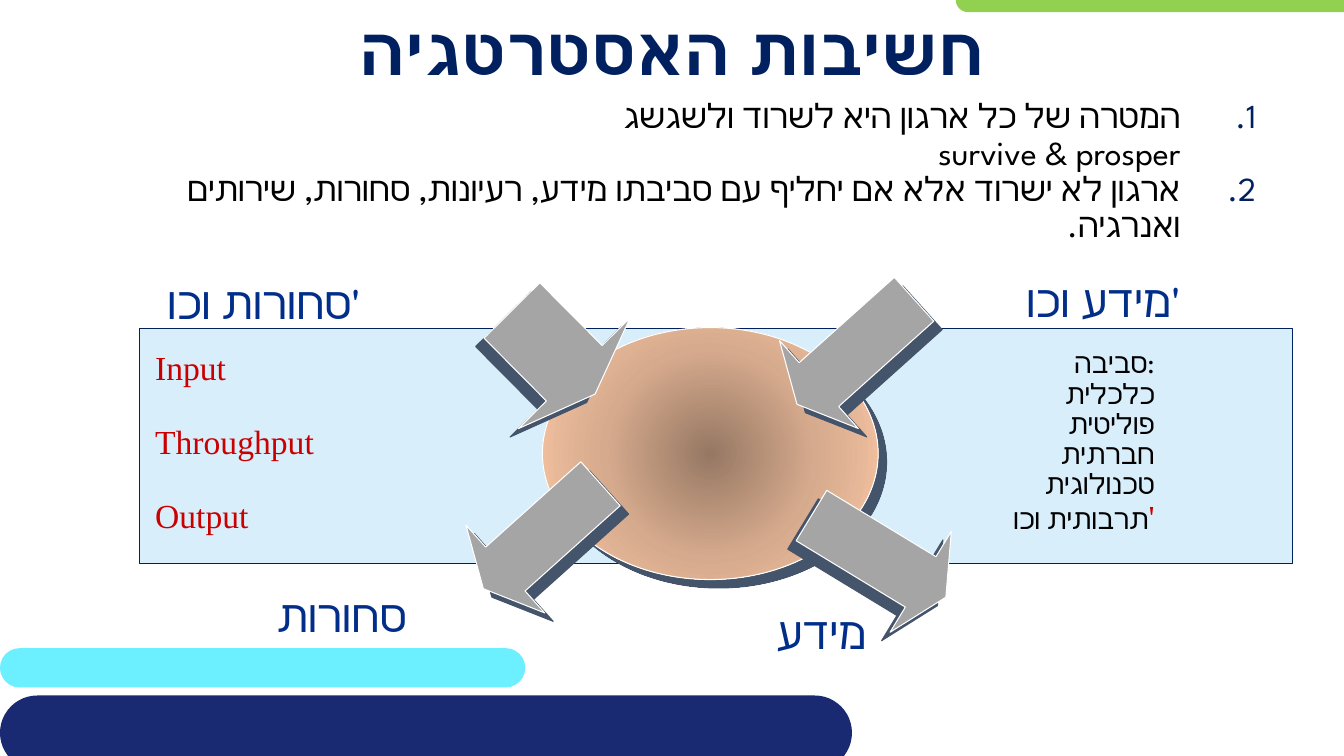
"""Build the slide on the importance of strategy for an organisation."""
import pptx
import pptx.util
import pptx.dml.color
import pptx.enum.shapes
import pptx.enum.text
import pptx.oxml
import pptx.oxml.ns

Inches = pptx.util.Inches
Pt = pptx.util.Pt
RGBColor = pptx.dml.color.RGBColor
SHAPE = pptx.enum.shapes.MSO_SHAPE
ALIGN = pptx.enum.text.PP_ALIGN
AUTO = pptx.enum.text.MSO_AUTO_SIZE
ANCHOR = pptx.enum.text.MSO_ANCHOR

NAVY = RGBColor(0x00, 0x20, 0x60)
BLUE = RGBColor(0x00, 0x2E, 0x89)
BAR_NAVY = RGBColor(0x19, 0x2A, 0x72)
CYAN = RGBColor(0x6C, 0xF0, 0xFF)
GREEN = RGBColor(0x92, 0xD0, 0x50)
PALE = RGBColor(0xD9, 0xEE, 0xFB)
GREY = RGBColor(0xA5, 0xA5, 0xA5)
SLATE = RGBColor(0x44, 0x54, 0x6A)
WHITE = RGBColor(0xFF, 0xFF, 0xFF)
BLACK = RGBColor(0x00, 0x00, 0x00)
RED = RGBColor(0xCA, 0x00, 0x00)
TAN_STOPS = (
    (0, RGBColor(0x96, 0x78, 0x63)),
    (50, RGBColor(0xD6, 0xAA, 0x8D)),
    (100, RGBColor(0xFD, 0xCA, 0xA7)),
)

SANS = "League Spartan"
SERIF = "Times New Roman"


def xml(body):
    """Parse a fragment whose root element is in the drawing namespace."""
    ns = pptx.oxml.ns.nsdecls("a")
    head, tail = body.split(">", 1)
    if head.endswith("/"):
        return pptx.oxml.parse_xml(f"{head[:-1]} {ns}/>")
    return pptx.oxml.parse_xml(f"{head} {ns}>{tail}")


def place(sp, at):
    """Move a shape to left, top, width and height in inches."""
    sp.left, sp.top, sp.width, sp.height = map(Inches, at)


def add_run(p, text, size=24, font=SANS, color=BLACK, bold=False):
    """Add one formatted run to a paragraph."""
    r = p.add_run()
    r.text = text
    r.font.size, r.font.name, r.font.bold = Pt(size), font, bold
    r.font.color.rgb = color
    r.font._element.append(xml(f'<a:cs typeface="{font}"/>'))


def write(tf, text, align=ALIGN.LEFT, spacing=1.0, gap=0, rtl=False, **fmt):
    """Fill a text frame, one paragraph a line, with vertical tabs as breaks."""
    for i, line in enumerate(text.split("\n")):
        p = tf.add_paragraph() if i else tf.paragraphs[0]
        p.alignment, p.line_spacing = align, spacing
        p.space_before = Pt(gap if i else 0)
        if rtl:
            p._p.get_or_add_pPr().set("rtl", "1")
        for j, part in enumerate(line.split("\v")):
            if j:
                p.add_line_break()
            add_run(p, part, **fmt)


def number(p, indent, color):
    """Give a paragraph a coloured number with a hanging indent."""
    pPr = p._p.get_or_add_pPr()
    pPr.set("marL", str(indent))
    pPr.set("indent", str(-indent))
    pPr.append(xml(f'<a:buClr><a:srgbClr val="{color}"/></a:buClr>'))
    pPr.append(xml('<a:buFont typeface="+mj-lt"/>'))
    pPr.append(xml('<a:buAutoNum type="arabicPeriod"/>'))


def add_shape(s, kind, at, fill, line=None, rotation=0):
    """Add a flat preset shape."""
    sp = s.shapes.add_shape(kind, *map(Inches, at))
    sp.rotation = rotation
    sp.shadow.inherit = False
    sp.fill.solid()
    sp.fill.fore_color.rgb = fill
    if line is None:
        sp.line.fill.background()
    else:
        sp.line.color.rgb = line
        sp.line.width = Pt(0.75)
    return sp


def add_bar(s, at, fill):
    """Add a decorative bar with fully rounded ends."""
    add_shape(s, SHAPE.ROUNDED_RECTANGLE, at, fill).adjustments[0] = 0.5


def cast_shadow(sp, angle):
    """Cast a hard slate shadow at an angle in degrees."""
    effects = sp._element.spPr.find(pptx.oxml.ns.qn("a:effectLst"))
    effects.append(xml(
        f'<a:outerShdw dist="{Pt(8.5)}" dir="{angle * 60000}" algn="ctr" '
        f'rotWithShape="0"><a:srgbClr val="{SLATE}"/></a:outerShdw>'))


def fill_radial(sp, stops):
    """Replace a solid fill with a gradient running out from the centre."""
    gs = "".join(f'<a:gs pos="{pos * 1000}"><a:srgbClr val="{color}"/></a:gs>'
                 for pos, color in stops)
    spPr = sp._element.spPr
    solid = spPr.find(pptx.oxml.ns.qn("a:solidFill"))
    spPr.replace(solid, xml(
        f'<a:gradFill rotWithShape="1"><a:gsLst>{gs}</a:gsLst><a:path path="circle">'
        '<a:fillToRect l="50000" t="50000" r="50000" b="50000"/>'
        '</a:path></a:gradFill>'))


def add_arrow(s, at, rotation, angle):
    """Add a block arrow with its shadow."""
    sp = add_shape(s, SHAPE.DOWN_ARROW, at, GREY, WHITE, rotation)
    sp.adjustments[0], sp.adjustments[1] = 0.5, 0.25
    cast_shadow(sp, angle)


def add_text(s, at, text, wrap=False, **fmt):
    """Add a text box and return its text frame."""
    tf = s.shapes.add_textbox(*map(Inches, at)).text_frame
    tf.word_wrap = wrap
    tf.auto_size = AUTO.SHAPE_TO_FIT_TEXT
    write(tf, text, **fmt)
    return tf


def fill_title(sp):
    """Place and write the title."""
    place(sp, (1, 0.02, 11.33, 0.92))
    tf = sp.text_frame
    tf.auto_size, tf.vertical_anchor = AUTO.NONE, ANCHOR.MIDDLE
    tf.margin_left = tf.margin_right = Inches(0.04)
    tf.margin_top = tf.margin_bottom = 0
    write(tf, "חשיבות האסטרטגיה", align=ALIGN.CENTER, rtl=True,
          size=48, color=NAVY, bold=True)


def fill_body(sp):
    """Place and write the numbered list."""
    place(sp, (0.63, 0.94, 11.93, 1.92))
    sp.fill.solid()
    sp.fill.fore_color.rgb = WHITE
    tf = sp.text_frame
    tf.auto_size, tf.vertical_anchor = AUTO.NONE, ANCHOR.TOP
    write(tf, "המטרה של כל ארגון היא לשרוד ולשגשג\vsurvive & prosper\n"
          "ארגון לא ישרוד אלא אם יחליף עם סביבתו מידע, רעיונות, סחורות, שירותים ואנרגיה.",
          align=ALIGN.RIGHT, spacing=0.9, rtl=True)
    for p in tf.paragraphs:
        number(p, Inches(0.75), NAVY)


def main():
    """Build and save the slide."""
    prs = pptx.Presentation()
    prs.slide_width, prs.slide_height = Inches(13.33), Inches(7.5)
    s = prs.slides.add_slide(prs.slide_layouts[1])
    fill_title(s.shapes.title)
    fill_body(s.placeholders[1])

    add_bar(s, (0, 6.43, 5.21, 0.39), CYAN)
    add_bar(s, (9.48, -0.12, 5.8, 0.24), GREEN)
    add_bar(s, (0, 6.9, 8.45, 0.74), BAR_NAVY)
    add_shape(s, SHAPE.RECTANGLE, (1.38, 3.26, 11.44, 2.33), PALE, NAVY)

    organisation = add_shape(s, SHAPE.OVAL, (5.38, 3.25, 3.33, 2.5), GREY, WHITE)
    fill_radial(organisation, TAN_STOPS)
    cast_shadow(organisation, 45)
    for at, rotation, angle in (
        ((7.9, 2.71, 1.17, 1.56), 48.1, 45),
        ((4.79, 4.54, 1.17, 1.56), 48.1, 45),
        ((8.13, 4.74, 1.17, 1.56), 301.3, 135),
        ((4.71, 2.91, 1.56, 1.17), 315.2, 135),
    ):
        add_arrow(s, at, rotation, angle)

    for at, text in (
        ((1.56, 2.68, 2.32, 0.64), "סחורות וכו'"),
        ((7.6, 5.95, 1.15, 0.64), "מידע"),
        ((2.65, 5.78, 1.61, 0.64), "סחורות"),
        ((10.08, 2.66, 1.86, 0.64), "מידע וכו'"),
    ):
        add_text(s, at, text, size=32, color=BLUE)

    environment = add_text(
        s, (9.24, 3.42, 2.31, 1.98),
        "סביבה:\nכלכלית\nפוליטית\nחברתית\nטכנולוגית\nתרבותית וכו",
        wrap=True, align=ALIGN.RIGHT, spacing=0.9, size=20)
    add_run(environment.paragraphs[-1], "'", font=SERIF, color=RED)
    add_text(s, (1.44, 3.44, 1.79, 1.92), "Input\nThroughput\nOutput",
             spacing=0.9, gap=27, font=SERIF, color=RED)
    prs.save("out.pptx")


if __name__ == "__main__":
    main()
